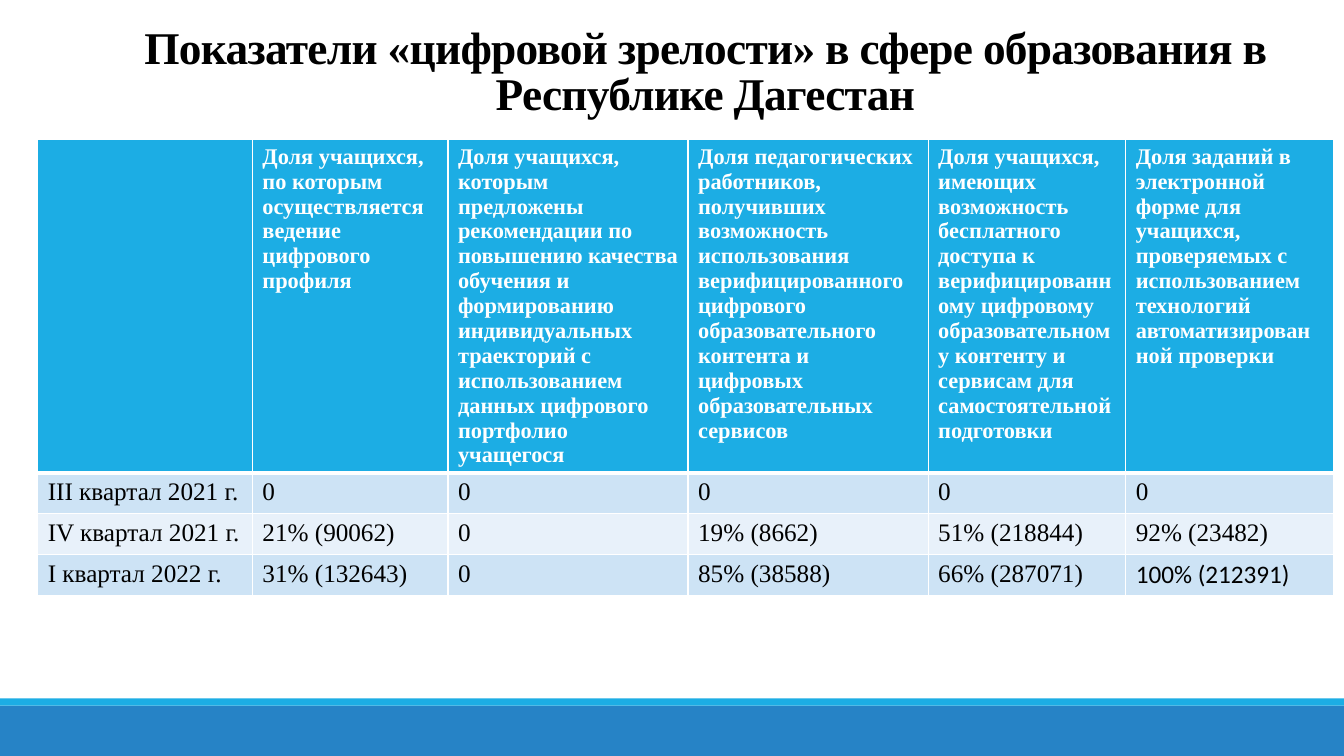
from dataclasses import dataclass

from lxml.etree import SubElement
from pptx import Presentation
from pptx.dml.color import RGBColor
from pptx.enum.shapes import MSO_SHAPE
from pptx.enum.text import MSO_ANCHOR, MSO_AUTO_SIZE, PP_ALIGN
from pptx.oxml.ns import qn
from pptx.util import Cm, Pt

WHITE = RGBColor(0xFF, 0xFF, 0xFF)
BLACK = RGBColor(0x00, 0x00, 0x00)
SKY = RGBColor(0x1C, 0xAD, 0xE4)
BLUE = RGBColor(0x26, 0x83, 0xC6)
PALE = RGBColor(0xCD, 0xE3, 0xF5)
PALER = RGBColor(0xE8, 0xF1, 0xFA)

SERIF = "Times New Roman"
TITLE = "Показатели «цифровой зрелости» в сфере образования в Республике Дагестан"
TITLE_FONT = {"name": SERIF, "size": Pt(32.4), "bold": True}
HEADER_FONT = {"name": SERIF, "size": Pt(16), "bold": True}
BODY_FONT = {"name": SERIF, "size": Pt(18), "bold": False}
LAST_FONT = {**BODY_FONT, "name": "Calibri"}

COLUMN_WIDTHS = (5.41, 4.93, 6.05, 6.05, 4.98, 5.23)
HEADER_HEIGHT = 8.37
ROW_HEIGHT = 1.03


@dataclass
class Band:
    top: float
    height: float
    color: RGBColor


@dataclass
class TableRow:
    texts: tuple[str, ...]
    fill: RGBColor
    color: RGBColor = BLACK
    header: bool = False


BANDS = (Band(17.78, 1.27, BLUE), Band(17.6, 0.18, SKY))

ROWS = (
    TableRow((
        "",
        "Доля учащихся, по которым осуществляется ведение цифрового профиля",
        "Доля учащихся, которым предложены рекомендации по повышению качества обучения "
        "и формированию индивидуальных траекторий с использованием данных цифрового "
        "портфолио учащегося",
        "Доля педагогических работников, получивших возможность использования "
        "верифицированного цифрового образовательного контента и цифровых "
        "образовательных сервисов",
        "Доля учащихся, имеющих возможность бесплатного доступа к верифицированному "
        "цифровому образовательному контенту и сервисам для самостоятельной подготовки",
        "Доля заданий в электронной форме для учащихся, проверяемых с использованием "
        "технологий автоматизированной проверки",
    ), SKY, WHITE, True),
    TableRow(("III квартал 2021 г.", "0", "0", "0", "0", "0"), PALE),
    TableRow(("IV квартал 2021 г.", "21% (90062)", "0", "19% (8662)",
              "51% (218844)", "92% (23482)"), PALER),
    TableRow(("I квартал 2022 г.", "31% (132643)", "0", "85% (38588)",
              "66% (287071)", "100% (212391)"), PALE),
)


def apply(target, values: dict) -> None:
    for name, value in values.items():
        setattr(target, name, value)


def write(para, text: str, font: dict, color: RGBColor):
    span = para.add_run()
    span.text = text
    apply(span.font, font)
    span.font.color.rgb = color
    return span


def draw_band(page, band: Band, width: int) -> None:
    box = page.shapes.add_shape(
        MSO_SHAPE.RECTANGLE, 0, Cm(band.top), width, Cm(band.height))
    box.shadow.inherit = False
    box.fill.solid()
    box.fill.fore_color.rgb = band.color
    box.line.fill.background()


def draw_title(page) -> None:
    title = page.shapes.title
    apply(title, {"left": Cm(2), "top": Cm(0.89), "width": Cm(31.55), "height": Cm(2.26)})
    apply(title.text_frame, {"word_wrap": True, "auto_size": MSO_AUTO_SIZE.NONE,
                             "vertical_anchor": MSO_ANCHOR.BOTTOM})
    para = title.text_frame.paragraphs[0]
    apply(para, {"alignment": PP_ALIGN.CENTER, "line_spacing": 0.85})
    span = write(para, TITLE, TITLE_FONT, BLACK)
    span.font._element.set("spc", "-50")


def draw_borders(cell, widths: dict[str, float]) -> None:
    properties = cell._tc.get_or_add_tcPr()
    for side, width in widths.items():
        line = SubElement(properties, qn(f"a:{side}"), w=str(Pt(width)))
        fill = SubElement(line, qn("a:solidFill"))
        SubElement(fill, qn("a:srgbClr"), val=str(WHITE))


def draw_table(page) -> None:
    height = HEADER_HEIGHT + ROW_HEIGHT * (len(ROWS) - 1)
    table = page.shapes.add_table(
        len(ROWS), len(COLUMN_WIDTHS), Cm(0.95), Cm(3.51),
        Cm(sum(COLUMN_WIDTHS)), Cm(height)).table
    for column, width in zip(table.columns, COLUMN_WIDTHS):
        column.width = Cm(width)
    for index, row in enumerate(ROWS):
        table.rows[index].height = Cm(HEADER_HEIGHT if row.header else ROW_HEIGHT)
        for position, text in enumerate(row.texts):
            cell = table.cell(index, position)
            draw_borders(cell, {"lnL": 1, "lnR": 1, "lnT": 3 if index == 1 else 1,
                                "lnB": 3 if row.header else 1})
            cell.fill.solid()
            cell.fill.fore_color.rgb = row.fill
            is_last = row is ROWS[-1] and position == len(row.texts) - 1
            font = HEADER_FONT if row.header else LAST_FONT if is_last else BODY_FONT
            if text:
                write(cell.text_frame.paragraphs[0], text, font, row.color)


def main() -> None:
    deck = Presentation()
    apply(deck, {"slide_width": Cm(33.87), "slide_height": Cm(19.05)})
    page = deck.slides.add_slide(deck.slide_layouts[5])
    for band in BANDS:
        draw_band(page, band, deck.slide_width)
    draw_title(page)
    draw_table(page)
    deck.save("out.pptx")


if __name__ == "__main__":
    main()
